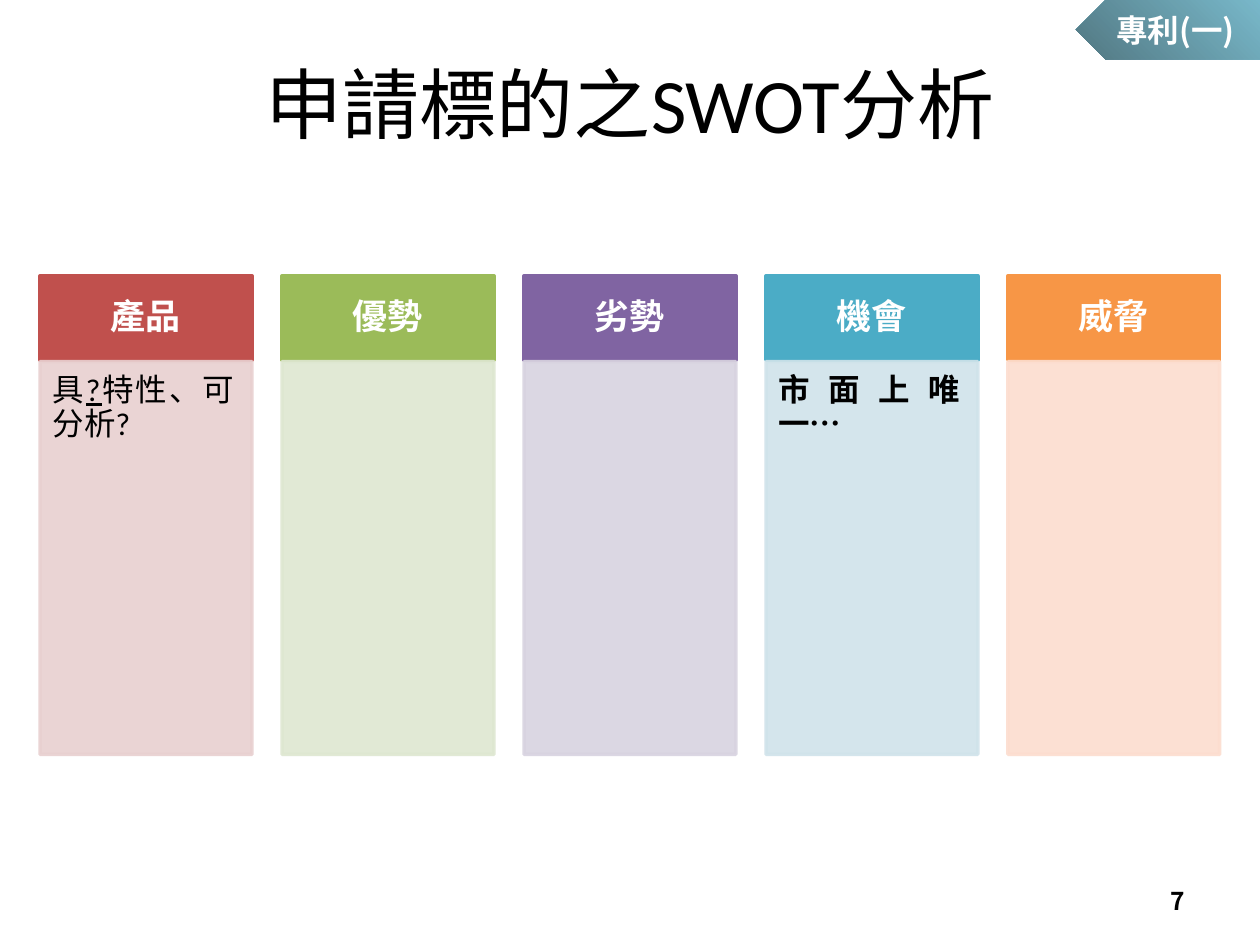
from lxml.etree import SubElement
from pptx import Presentation
from pptx.dml.color import RGBColor
from pptx.enum.shapes import MSO_SHAPE
from pptx.enum.text import MSO_ANCHOR, PP_ALIGN
from pptx.oxml.ns import qn
from pptx.util import Cm, Pt

INK = {"black": "000000", "white": "FFFFFF", "light": "57A7BD", "dark": "275663"}
SANS, CJK = "Calibri", "Noto Sans CJK SC"

# heading, strong colour, pale colour, body runs as (text, bold, underlined)
COLS = [
    ("產品", "C0504D", "E8D0D0",
     [("具", False, False), ("?", False, True), ("特性、可分析?", False, False)]),
    ("優勢", "9BBB59", "DEE7D1", []),
    ("劣勢", "8064A2", "D8D3E0", []),
    ("機會", "4BACC6", "D0E3EA", [("市面上唯一…", True, False)]),
    ("威脅", "F79646", "FCDDCF", []),
]


def rgb(code):
    return RGBColor.from_string(code)


def fade(shape, part):
    """Make every colour of the shape's fill and line part opaque."""
    for node in shape._element.spPr.iter(qn("a:srgbClr")):
        SubElement(node, qn("a:alpha")).set("val", str(part * 1000))


def add_run(para, text, size, face, ink, bold=False, under=False):
    run = para.add_run()
    run.text = text
    font = run.font
    font.size, font.name, font.bold = Pt(size), face, bold
    font.underline = under
    font.color.rgb = rgb(ink)
    SubElement(run._r.get_or_add_rPr(), qn("a:ea")).set("typeface", CJK)


def set_frame(shape, align, anchor, pads=None, lead=None):
    """Lay out the text frame and return its first paragraph."""
    frame = shape.text_frame
    frame.word_wrap = True
    frame.vertical_anchor = anchor
    if pads:
        (frame.margin_left, frame.margin_top,
         frame.margin_right, frame.margin_bottom) = map(Cm, pads)
    para = frame.paragraphs[0]
    para.alignment = align
    if lead:
        para.line_spacing = lead
    return para


def add_block(slide, box, tint):
    shape = slide.shapes.add_shape(MSO_SHAPE.RECTANGLE, *map(Cm, box))
    shape.shadow.inherit = False
    shape.fill.solid()
    shape.fill.fore_color.rgb = rgb(tint)
    shape.line.color.rgb = rgb(tint)
    shape.line.width = Pt(2)
    return shape


def add_title(slide, box):
    title = slide.shapes.title
    title.left, title.top, title.width, title.height = map(Cm, box)
    para = set_frame(title, PP_ALIGN.CENTER, MSO_ANCHOR.MIDDLE)
    add_run(para, "申請標的之SWOT分析", 44, SANS, INK["black"])


def add_col(slide, box, name, deep, pale, runs):
    left, top, width, height = box
    head = add_block(slide, (left, top, width, 1.7), deep)
    para = set_frame(head, PP_ALIGN.CENTER, MSO_ANCHOR.MIDDLE,
                     (0.4, 0.23, 0.4, 0.23), 0.9)
    add_run(para, name, 20, CJK, INK["white"], True)

    body = add_block(slide, (left, top + 1.73, width, height - 1.73), pale)
    fade(body, 90)
    para = set_frame(body, PP_ALIGN.JUSTIFY, MSO_ANCHOR.TOP,
                     (0.25, 0.25, 0.36, 0.4), 0.9)
    for text, bold, under in runs:
        add_run(para, text, 18, SANS, INK["black"], bold, under)


def add_swot(slide, box):
    left, top, width, height = box
    wide = 4.27
    step = (width - wide) / (len(COLS) - 1)
    for i, col in enumerate(COLS):
        add_col(slide, (left + i * step, top, wide, height), *col)


def add_tag(slide, box):
    tag = slide.shapes.add_shape(MSO_SHAPE.PENTAGON, *map(Cm, box))
    tag.shadow.inherit = False
    tag._element.spPr.xfrm.set("flipH", "1")
    tag.line.fill.background()
    tag.fill.gradient()
    tag.fill.gradient_angle = 315
    for stop, tint in zip(tag.fill.gradient_stops, ("light", "dark")):
        stop.color.rgb = rgb(INK[tint])
    fade(tag, 80)
    para = set_frame(tag, PP_ALIGN.CENTER, MSO_ANCHOR.MIDDLE)
    add_run(para, "專利(一)", 18, CJK, INK["white"], True)


def add_page(slide, box):
    page = slide.shapes.add_textbox(*map(Cm, box))
    para = set_frame(page, PP_ALIGN.RIGHT, MSO_ANCHOR.MIDDLE)
    add_run(para, "7", 14, CJK, INK["black"], True)


def main():
    deck = Presentation()
    deck.slide_width, deck.slide_height = Cm(25.4), Cm(19.05)
    slide = deck.slides.add_slide(deck.slide_layouts[5])
    add_title(slide, (1.27, 0.48, 22.86, 3.18))
    add_swot(slide, (0.81, 5.56, 23.78, 9.65))
    add_tag(slide, (21.69, 0, 3.71, 1.2))
    add_page(slide, (18.2, 17.66, 5.93, 1.01))
    deck.save("out.pptx")


if __name__ == "__main__":
    main()
